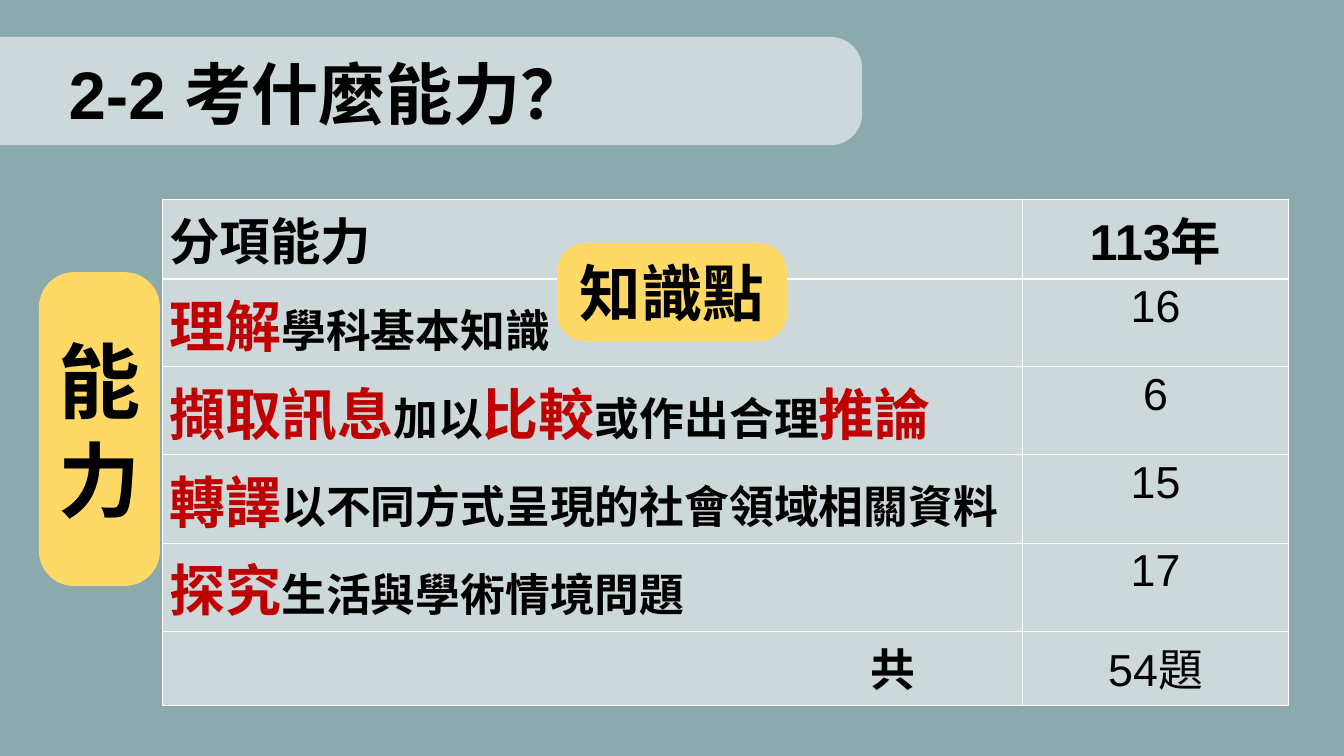
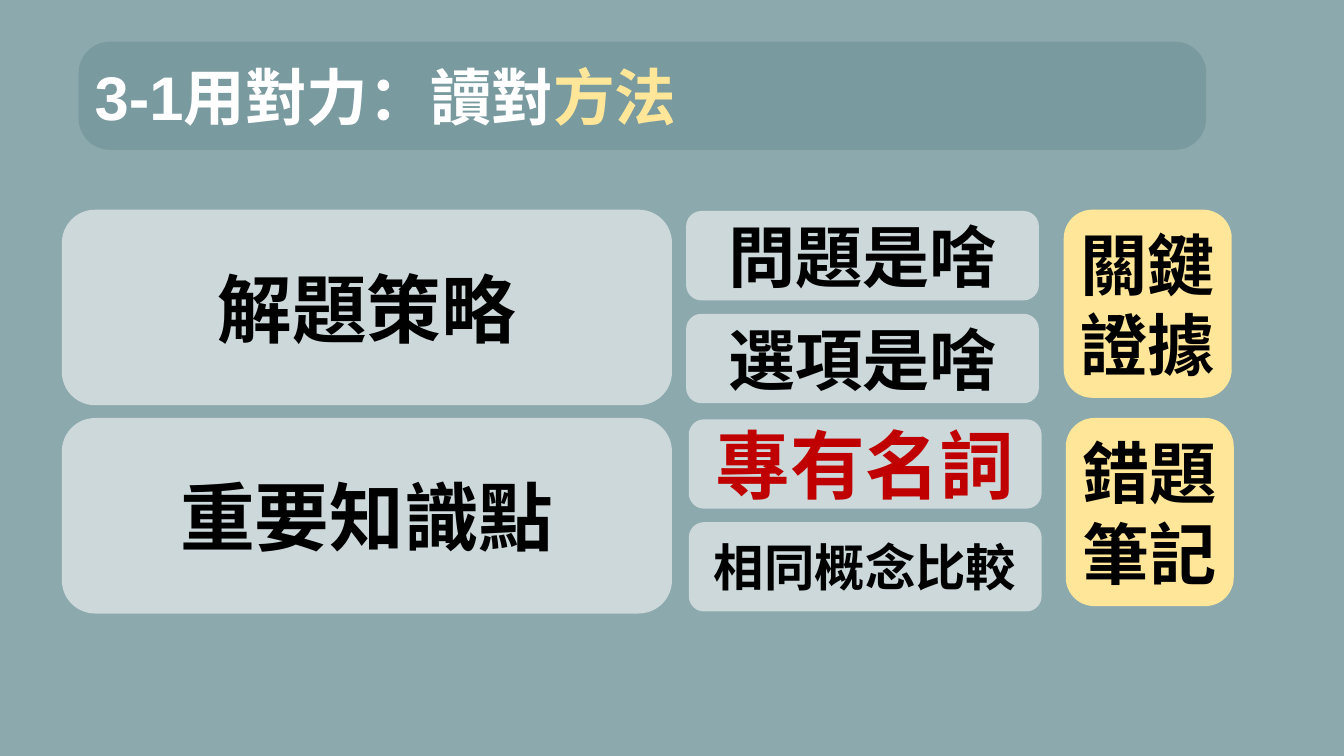
from dataclasses import dataclass

from lxml import etree
from pptx import Presentation
from pptx.dml.color import RGBColor
from pptx.enum.shapes import MSO_SHAPE
from pptx.enum.text import MSO_ANCHOR, MSO_AUTO_SIZE, PP_ALIGN
from pptx.oxml.ns import qn
from pptx.util import Inches, Pt

ROUND = MSO_SHAPE.ROUNDED_RECTANGLE
MIDDLE = MSO_ANCHOR.MIDDLE
FIXED = MSO_AUTO_SIZE.NONE
LEFT, CENTER, RIGHT = PP_ALIGN.LEFT, PP_ALIGN.CENTER, PP_ALIGN.RIGHT


@dataclass(frozen=True)
class Theme:
    font: str = "Arial"
    back: str = "8CA9AD"
    pale: str = "CCD8DA"
    deep: str = "799A9F"
    gold: str = "FFD966"
    cream: str = "FFE699"
    red: str = "C00000"
    ink: str = "000000"
    white: str = "FFFFFF"
    body: int = 48
    head: int = 54
    key: int = 60
    tag: int = 66
    title: int = 72
    large: int = 80
    huge: int = 88
    soft: float = 0.17
    curve: float = 0.29


THEME = Theme()


def paint(fill, color):
    fill.solid()
    fill.fore_color.rgb = RGBColor.from_string(color)


def style(run, size, color, bold=True):
    font = run.font
    font.name = THEME.font
    font.size = Pt(size)
    font.bold = bold
    font.color.rgb = RGBColor.from_string(color)


def write(par, parts, align=LEFT, bold=True):
    par.alignment = align
    for text, size, color in parts:
        run = par.add_run()
        run.text = text
        style(run, size, color, bold)


def add_box(slide, area, fill, curve=THEME.soft):
    box = slide.shapes.add_shape(ROUND, *map(Inches, area))
    box.adjustments[0] = curve
    box.shadow.inherit = False
    paint(box.fill, fill)
    box.line.fill.background()
    return box


def add_label(slide, area, fill, text, size, color=THEME.ink, curve=THEME.soft):
    frame = add_box(slide, area, fill, curve).text_frame
    frame.word_wrap = True
    frame.vertical_anchor = MIDDLE
    frame.text = text
    par = frame.paragraphs[0]
    par.alignment = CENTER
    style(par.runs[0], size, color)


def add_title(slide, band, fill, area, parts, space=1.0):
    title = slide.shapes.title
    title.left, title.top, title.width, title.height = map(Inches, area)
    title.element.addprevious(add_box(slide, band, fill, THEME.curve).element)
    frame = title.text_frame
    frame.word_wrap = True
    frame.auto_size = FIXED
    frame.vertical_anchor = MIDDLE
    par = frame.paragraphs[0]
    par.line_spacing = space
    write(par, parts)


def add_edges(cell, widths):
    props = cell._tc.get_or_add_tcPr()
    for side, width in zip("LRTB", widths):
        line = etree.SubElement(props, qn(f"a:ln{side}"), w=str(Pt(width)))
        fill = etree.SubElement(line, qn("a:solidFill"))
        etree.SubElement(fill, qn("a:srgbClr"), val=THEME.white)


def add_grid(slide, left, top, cols, rows, data):
    area = map(Inches, (left, top, sum(cols), sum(rows)))
    table = slide.shapes.add_table(len(rows), len(cols), *area).table
    table.horz_banding = False
    for col, width in zip(table.columns, cols):
        col.width = Inches(width)
    for row, height in zip(table.rows, rows):
        row.height = Inches(height)
    for y, line in enumerate(data):
        for x, parts in enumerate(line):
            cell = table.cell(y, x)
            add_edges(cell, (1, 1, 3 if y == 1 else 1, 3 if y == 0 else 1))
            paint(cell.fill, THEME.pale)
            par = cell.text_frame.paragraphs[0]
            write(par, parts, CENTER if x else LEFT, x == 0 or y == 0)
    return table


def head(text):
    return [(text, THEME.head, THEME.ink)]


def key(text):
    return (text, THEME.key, THEME.red)


def plain(text):
    return (text, THEME.body, THEME.ink)


def new_slide(deck):
    return deck.slides.add_slide(deck.slide_layouts[5])


def skill_slide(deck):
    slide = new_slide(deck)
    add_title(slide, (-0.67, 0.55, 13.5, 1.61), THEME.pale,
              (0.92, 0.77, 12, 1.36),
              [("2-2 考什麼能力？", THEME.title, THEME.ink)], 0.9)
    data = [
        (head("分項能力"), head("113年")),
        ([key("理解"), plain("學科基本知識")], [plain("16")]),
        ([key("擷取訊息"), plain("加以"), key("比較"),
          plain("或作出合理"), key("推論")], [plain("6")]),
        ([key("轉譯"), plain("以不同方式呈現的社會領域相關資料")], [plain("15")]),
        ([key("探究"), plain("生活與學術情境問題")], [plain("17")]),
        ([plain("共")], [plain("54題")]),
    ]
    rows = [1.19] + [1.31] * 4 + [1.11]
    table = add_grid(slide, 2.42, 2.96, (12.8, 3.95), rows, data)
    total = table.cell(len(rows) - 1, 0)
    total.margin_right = Inches(1.6)
    total.text_frame.paragraphs[0].alignment = RIGHT
    add_label(slide, (8.29, 3.62, 3.42, 1.46), THEME.gold, "知識點",
              THEME.tag, curve=THEME.curve)
    add_label(slide, (0.58, 4.05, 1.8, 4.67), THEME.gold, "能力",
              THEME.huge, curve=THEME.curve)


def method_slide(deck):
    slide = new_slide(deck)
    add_title(slide, (1.17, 0.62, 16.78, 1.61), THEME.deep,
              (1.31, 0.62, 16.5, 1.61),
              [("3-1用對力：讀對", THEME.tag, THEME.white),
               ("方法", THEME.tag, THEME.cream)])
    groups = [
        ("解題策略", "關鍵證據",
         [("問題是啥", THEME.title, THEME.ink),
          ("選項是啥", THEME.title, THEME.ink)]),
        ("重要知識點", "錯題筆記",
         [("專有名詞", THEME.large, THEME.red),
          ("相同概念比較", THEME.head, THEME.ink)]),
    ]
    for row, (topic, note, steps) in enumerate(groups):
        top = 3.12 + 3.1 * row
        add_label(slide, (0.92, top, 9.08, 2.91), THEME.pale, topic, THEME.large)
        for step, (text, size, color) in enumerate(steps):
            area = (10.21 + 0.04 * row, top + 0.02 + 1.53 * step, 5.25, 1.33)
            add_label(slide, area, THEME.pale, text, size, color)
        add_label(slide, (15.83 + 0.03 * row, top, 2.5, 2.8),
                  THEME.cream, note, THEME.title)


def main():
    deck = Presentation()
    deck.slide_width, deck.slide_height = Inches(20), Inches(11.25)
    paint(deck.slide_master.background.fill, THEME.back)
    skill_slide(deck)
    method_slide(deck)
    deck.save("out.pptx")


if __name__ == "__main__":
    main()
